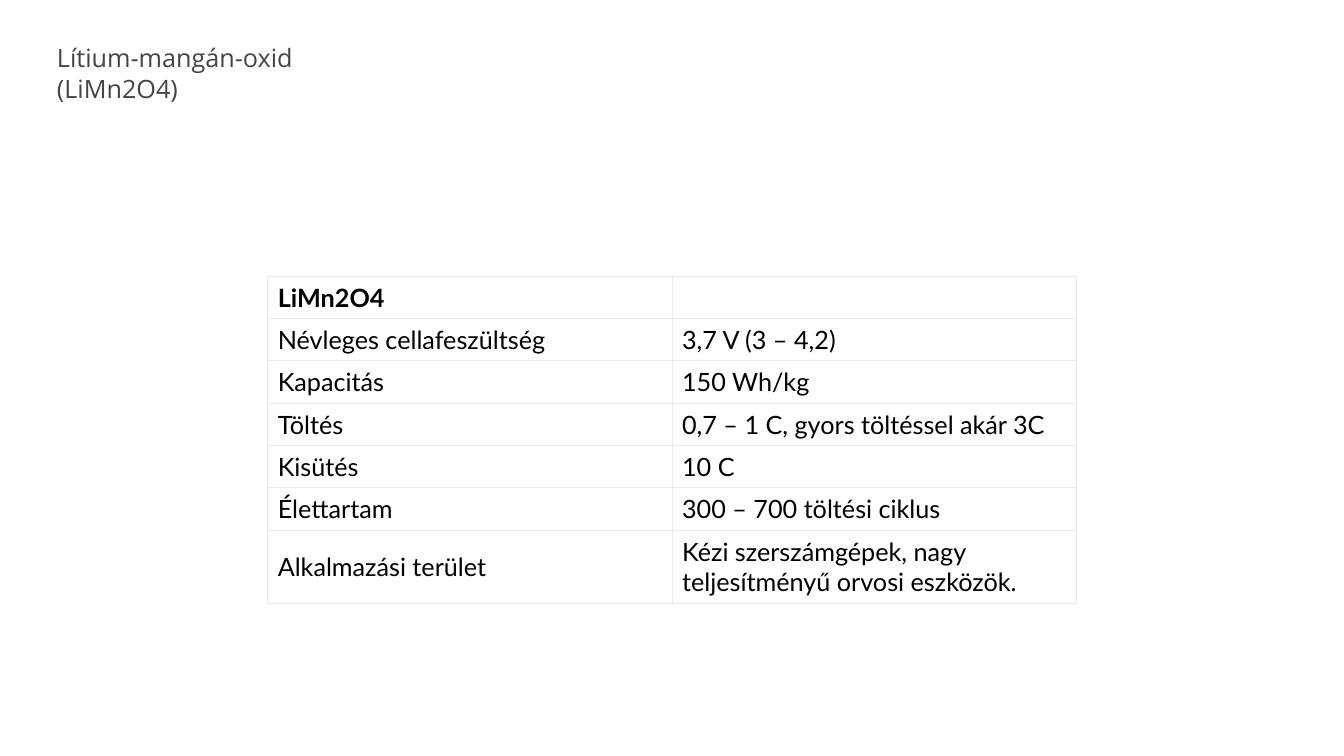
import pptx
import pptx.util
import pptx.dml.color
import pptx.enum.text
import lxml.etree

Inch = pptx.util.Inches
NS = "http://schemas.openxmlformats.org/drawingml/2006/main"


def paint(code):
    return pptx.dml.color.RGBColor.from_string(code)


def style(font, face, code):
    font.name = face
    font.size = pptx.util.Pt(18)
    font.color.rgb = paint(code)


deck = pptx.Presentation()
deck.slide_width = Inch(13.33)
deck.slide_height = Inch(7.5)
slide = deck.slides.add_slide(deck.slide_layouts[6])
wide, high = deck.slide_width, deck.slide_height

# Title
title = slide.shapes.add_textbox(
    int(wide * 0.035), int(high * 0.05), Inch(3.69), Inch(0.4))
frame = title.text_frame
frame.word_wrap = True
frame.auto_size = pptx.enum.text.MSO_AUTO_SIZE.SHAPE_TO_FIT_TEXT
frame.text = "Lítium-mangán-oxid (LiMn2O4)"
style(frame.paragraphs[0].runs[0].font, "Open Sans", "444444")

# Table grid, centred across the slide
facts = [
    ("LiMn2O4", ""),
    ("Névleges cellafeszültség", "3,7 V (3 – 4,2)"),
    ("Kapacitás", "150 Wh/kg"),
    ("Töltés", "0,7 – 1 C, gyors töltéssel akár 3C"),
    ("Kisütés", "10 C"),
    ("Élettartam", "300 – 700 töltési ciklus"),
    ("Alkalmazási terület",
     "Kézi szerszámgépek, nagy teljesítményű orvosi eszközök."),
]
span = Inch(8.02)
line, last = Inch(0.42), Inch(0.73)
tall = line * (len(facts) - 1) + last
grid = slide.shapes.add_table(
    len(facts), 2, (wide - span) // 2, Inch(2.74), span, tall).table
grid.first_row = False
grid.horz_banding = False
for row in grid.rows:
    row.height = line
grid.rows[len(facts) - 1].height = last

# Cells: text, fill and thin grey borders
for r, pair in enumerate(facts):
    for c, words in enumerate(pair):
        cell = grid.cell(r, c)
        cell.text = words
        cell.vertical_anchor = pptx.enum.text.MSO_ANCHOR.MIDDLE
        cell.margin_left = cell.margin_right = Inch(0.1)
        cell.margin_top = cell.margin_bottom = Inch(0.06)
        para = cell.text_frame.paragraphs[0]
        style(para.font, "Lato", "000000")
        for run in para.runs:
            style(run.font, "Lato", "000000")
            run.font.bold = r == 0
        props = cell._tc.get_or_add_tcPr()
        for side in ("lnL", "lnR", "lnT", "lnB"):
            edge = lxml.etree.SubElement(
                props, f"{{{NS}}}{side}", w=str(pptx.util.Pt(0.75)))
            ink = lxml.etree.SubElement(edge, f"{{{NS}}}solidFill")
            lxml.etree.SubElement(ink, f"{{{NS}}}srgbClr", val="EAEAEA")
        cell.fill.solid()
        cell.fill.fore_color.rgb = paint("FFFFFF")

deck.save("out.pptx")
